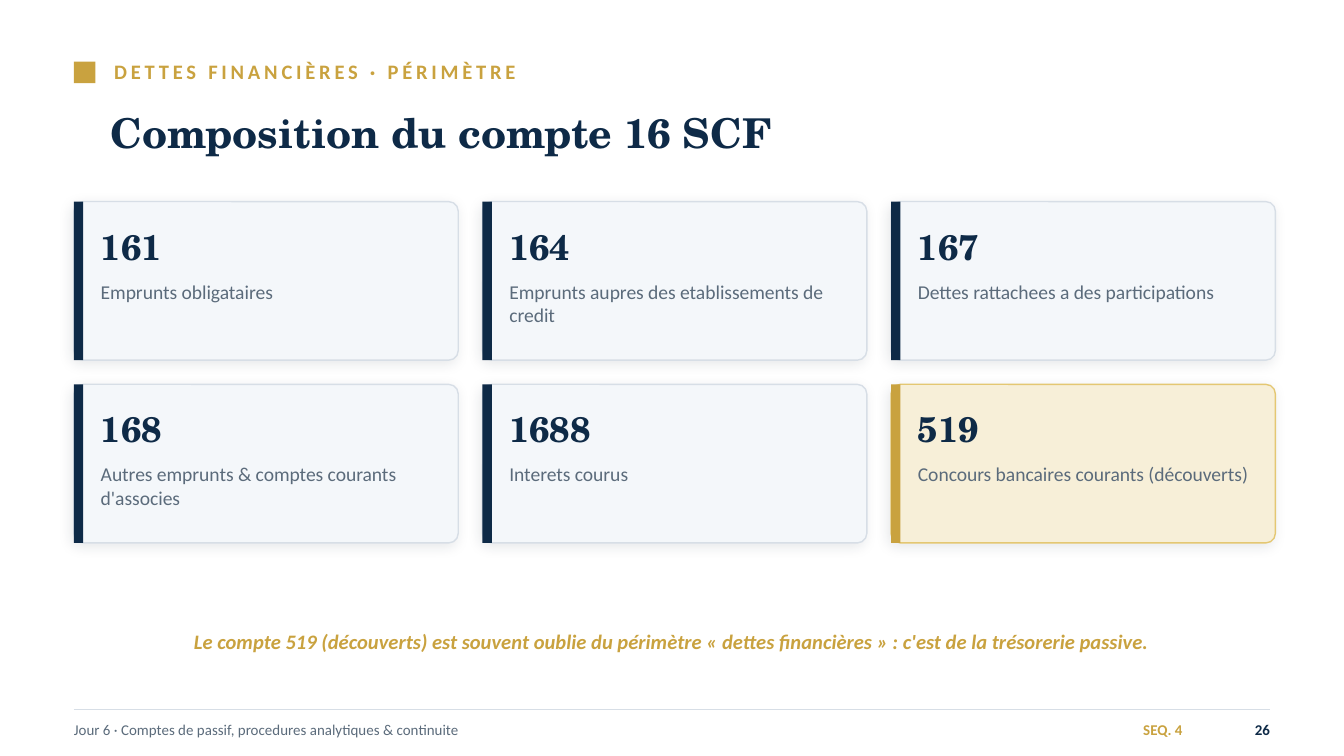
from lxml import etree
from pptx import Presentation
from pptx import util as u
from pptx.dml.color import RGBColor
from pptx.enum import shapes, text
from pptx.oxml.ns import qn

NAVY = RGBColor(0x0E, 0x2A, 0x47)
GOLD = RGBColor(0xC9, 0xA2, 0x3F)
GOLD_EDGE = RGBColor(0xE4, 0xC7, 0x72)
CREAM = RGBColor(0xF7, 0xEF, 0xD8)
SLATE = RGBColor(0x5B, 0x6B, 0x7B)
RULE = RGBColor(0xD7, 0xDE, 0xE6)
MIST = RGBColor(0xF4, 0xF7, 0xFA)
SHADOW = RGBColor(0x1B, 0x2A, 0x3A)

SERIF, SANS = "TeX Gyre Schola", "Calibri"
LEFT, RIGHT, TOP = 0.55, 9.45, 1.5
CARD_W, CARD_H, GAP, COLUMNS = 2.86, 1.18, 0.18, 3

ACCOUNTS = [
    ("161", "Emprunts obligataires"),
    ("164", "Emprunts aupres des etablissements de credit"),
    ("167", "Dettes rattachees a des participations"),
    ("168", "Autres emprunts & comptes courants d'associes"),
    ("1688", "Interets courus"),
    ("519", "Concours bancaires courants (découverts)"),
]
HIGHLIGHT = "519"


def inches(*lengths):
    return [u.Inches(v) for v in lengths]


def write(sp, content, size, color, font=SANS, bold=False, italic=False,
          align=text.PP_ALIGN.LEFT, anchor=text.MSO_ANCHOR.MIDDLE, spacing=None):
    """Fill a text shape with one paragraph and no margins."""
    tf = sp.text_frame
    tf.text = content
    tf.word_wrap = True
    tf.auto_size = text.MSO_AUTO_SIZE.NONE
    tf.vertical_anchor = anchor
    tf.margin_left = tf.margin_right = tf.margin_top = tf.margin_bottom = 0
    p = tf.paragraphs[0]
    p.alignment = align
    r = p.runs[0]
    r.font.name, r.font.size = font, u.Pt(size)
    r.font.bold, r.font.italic = bold, italic
    r.font.color.rgb = color
    if spacing:
        r.font._element.set("spc", str(spacing * 100))


def add_label(s, box, content, size, color, **style):
    write(s.shapes.add_textbox(*inches(*box)), content, size, color, **style)


def add_block(s, box, fill, line=None, kind=shapes.MSO_SHAPE.RECTANGLE):
    sp = s.shapes.add_shape(kind, *inches(*box))
    sp.shadow.inherit = False
    sp.fill.solid()
    sp.fill.fore_color.rgb = fill
    if line is None:
        sp.line.fill.background()
    else:
        sp.line.color.rgb = line
        sp.line.width = u.Pt(0.75)
    return sp


def add_soft_shadow(sp):
    effects = sp._element.spPr.find(qn("a:effectLst"))
    shadow = etree.SubElement(
        effects, qn("a:outerShdw"), blurRad=str(u.Pt(7)), dist=str(u.Pt(2)),
        dir=str(135 * 60000), algn="bl", rotWithShape="0")
    color = etree.SubElement(shadow, qn("a:srgbClr"), val=str(SHADOW))
    etree.SubElement(color, qn("a:alpha"), val="10000")


def add_card(s, x, y, number, name):
    marked = number == HIGHLIGHT
    card = add_block(s, (x, y, CARD_W, CARD_H), CREAM if marked else MIST,
                     GOLD_EDGE if marked else RULE, shapes.MSO_SHAPE.ROUNDED_RECTANGLE)
    card.adjustments[0] = 0.06
    add_soft_shadow(card)
    add_block(s, (x, y, 0.07, CARD_H), GOLD if marked else NAVY)
    add_label(s, (x + 0.2, y + 0.12, CARD_W - 0.35, 0.42), number, 19, NAVY,
              font=SERIF, bold=True)
    add_label(s, (x + 0.2, y + 0.58, CARD_W - 0.4, 0.52), name, 10.5, SLATE,
              anchor=text.MSO_ANCHOR.TOP)


def add_heading(s):
    add_block(s, (LEFT, 0.46, 0.16, 0.16), GOLD)
    add_label(s, (0.85, 0.4, 8.6, 0.26), "DETTES FINANCIÈRES · PÉRIMÈTRE", 11, GOLD,
              bold=True, spacing=2)
    title = s.shapes.title
    title.left, title.top, title.width, title.height = inches(0.82, 0.65, 8.7, 0.66)
    write(title, "Composition du compte 16 SCF", 22, NAVY, font=SERIF, bold=True)


def add_footer(s):
    rule = s.shapes.add_connector(shapes.MSO_CONNECTOR.STRAIGHT,
                                  *inches(LEFT, 5.28, RIGHT, 5.28))
    rule.line.color.rgb = RULE
    rule.line.width = u.Pt(0.75)
    etree.SubElement(rule._element.spPr, qn("a:effectLst"))
    add_label(s, (LEFT, 5.3, 6.4, 0.25),
              "Jour 6 · Comptes de passif, procedures analytiques & continuite", 8, SLATE)
    for x, width, content, color in ((6.9, 1.9, "SEQ. 4", GOLD), (9, 0.45, "26", NAVY)):
        add_label(s, (x, 5.3, width, 0.25), content, 8, color, bold=True,
                  align=text.PP_ALIGN.RIGHT)


def main():
    prs = Presentation()
    prs.slide_width = u.Inches(10)
    prs.slide_height = prs.slide_width * 9 // 16
    s = prs.slides.add_slide(prs.slide_layouts[5])
    add_heading(s)
    add_footer(s)
    for i, (number, name) in enumerate(ACCOUNTS):
        row, column = divmod(i, COLUMNS)
        add_card(s, LEFT + column * (CARD_W + GAP), TOP + row * (CARD_H + GAP), number, name)
    add_label(s, (LEFT, 4.6, RIGHT - LEFT, 0.35),
              "Le compte 519 (découverts) est souvent oublie du périmètre "
              "« dettes financières » : c'est de la trésorerie passive.",
              11, GOLD, bold=True, italic=True, align=text.PP_ALIGN.CENTER)
    prs.save("out.pptx")


if __name__ == "__main__":
    main()
